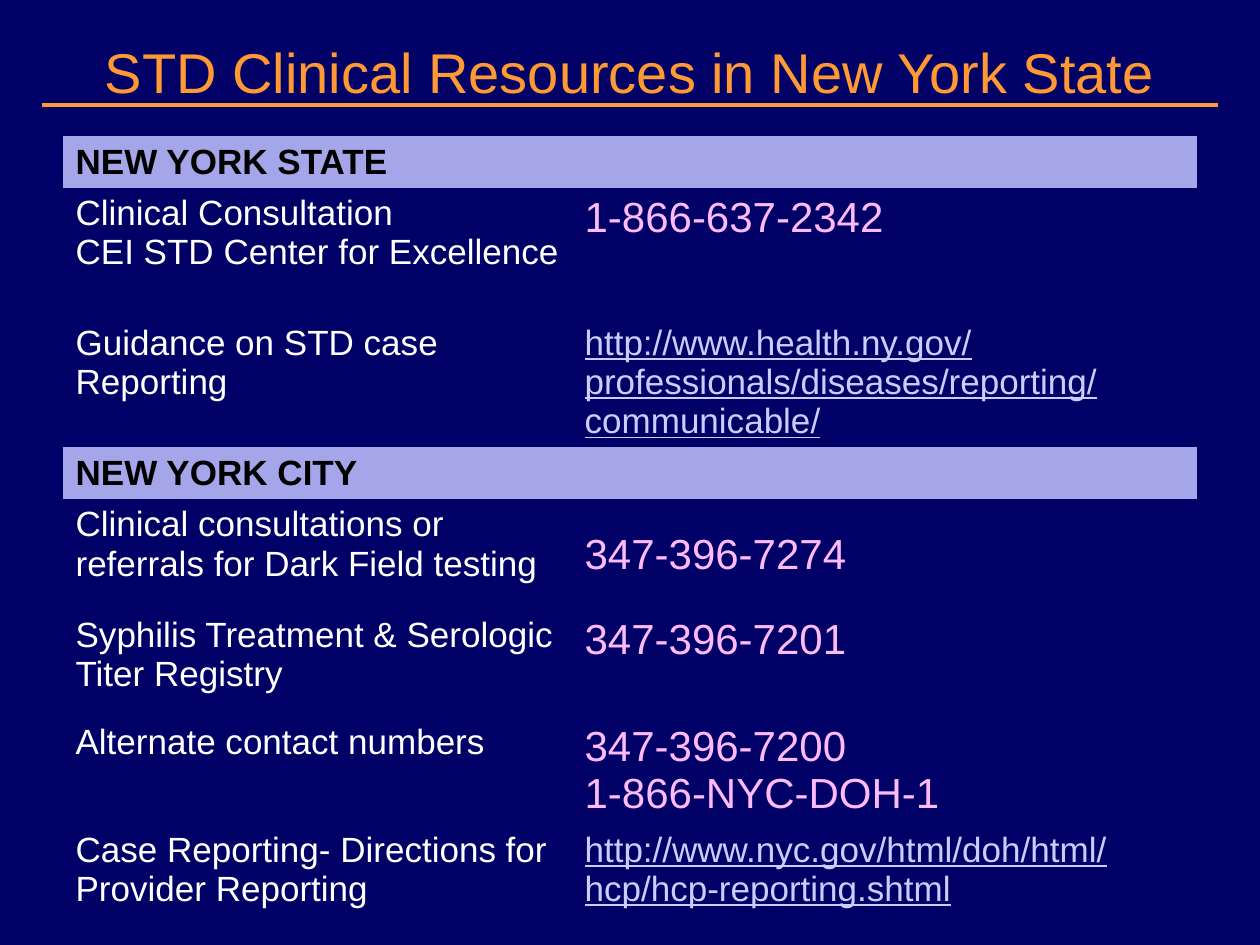
from pptx import Presentation
from pptx.dml.color import RGBColor
from pptx.enum import shapes, text
from pptx.oxml.ns import qn
from pptx.util import Inches, Pt
from lxml import etree

TITLE = "STD Clinical Resources in New York State"

# Each row: kind, height, left lines, right lines
ROWS = [
    ("section", 0.4, ["NEW YORK STATE"], []),
    ("phone", 1.03, ["Clinical Consultation", "CEI STD Center for Excellence"],
     ["1-866-637-2342"]),
    ("link", 1.03, ["Guidance on STD case Reporting"],
     ["http://www.health.ny.gov/professionals/diseases/reporting/communicable/"]),
    ("section", 0.4, ["NEW YORK CITY"], []),
    ("phone_middle", 0.88,
     ["Clinical consultations or referrals for Dark Field testing"],
     ["347-396-7274"]),
    ("phone", 0.85, ["Syphilis Treatment & Serologic Titer Registry"],
     ["347-396-7201"]),
    ("phone", 0.85, ["Alternate contact numbers"],
     ["347-396-7200", "1-866-NYC-DOH-1"]),
    ("link", 0.72, ["Case Reporting- Directions for Provider Reporting"],
     ["http://www.nyc.gov/html/doh/html/hcp/hcp-reporting.shtml"]),
]
COLUMNS = [4.04, 4.96]

THEME = {
    "font": "Arial",
    "background": "000066",
    "accent": "FF9933",
    "band": "A5A5E9",
    "title": dict(size=32, color="FF9933"),
    "section": dict(size=20, color="000000", bold=True),
    "label": dict(size=20, color="FFFFFF"),
    "phone": dict(size=24, color="FFB9FF"),
    "link": dict(size=20, color="CCCCFF", underline=True),
}
NO_STYLE = "{2D5ABB26-0587-4C30-8999-92F81FD0307C}"


def rgb(name):
    return RGBColor.from_string(THEME[name])


def write(tf, lines, style, align=text.PP_ALIGN.LEFT):
    look = THEME[style]
    tf.word_wrap = True
    for i, line in enumerate(lines):
        p = tf.paragraphs[0] if i == 0 else tf.add_paragraph()
        p.text = line
        p.alignment = align
        p.font.name = THEME["font"]
        p.font.size = Pt(look["size"])
        p.font.bold = look.get("bold", False)
        p.font.underline = look.get("underline", False)
        p.font.color.rgb = RGBColor.from_string(look["color"])


prs = Presentation()
prs.slide_width, prs.slide_height = Inches(10), Inches(7.5)
s = prs.slides.add_slide(prs.slide_layouts[5])
s.background.fill.solid()
s.background.fill.fore_color.rgb = rgb("background")

# Title
title = s.shapes.title
title.left, title.top = Inches(0), Inches(0.25)
title.width, title.height = Inches(10), Inches(1.25)
title.text_frame.auto_size = text.MSO_AUTO_SIZE.NONE
title.text_frame.vertical_anchor = text.MSO_ANCHOR.TOP
write(title.text_frame, [TITLE], "title", text.PP_ALIGN.CENTER)

# Rule under the title
rule = s.shapes.add_connector(shapes.MSO_CONNECTOR.STRAIGHT, Inches(0.33),
                              Inches(0.83), Inches(9.67), Inches(0.83))
rule.line.color.rgb = rgb("accent")
rule.line.width = Pt(2.25)
etree.SubElement(rule._element.spPr, qn("a:effectLst"))

# Resource table
frame = s.shapes.add_table(len(ROWS), len(COLUMNS), Inches(0.5), Inches(1.08),
                           Inches(sum(COLUMNS)),
                           Inches(sum(row[1] for row in ROWS)))
table = frame.table
table.first_row = table.horz_banding = False
table._tbl.tblPr.find(qn("a:tableStyleId")).text = NO_STYLE
for column, width in zip(table.columns, COLUMNS):
    column.width = Inches(width)

for i, (kind, height, left, right) in enumerate(ROWS):
    table.rows[i].height = Inches(height)
    label, value = table.cell(i, 0), table.cell(i, 1)
    if kind == "section":
        label.merge(value)
        for cell in (label, value):
            cell.fill.solid()
            cell.fill.fore_color.rgb = rgb("band")
        write(label.text_frame, left, "section")
        continue
    for cell in (label, value):
        cell.fill.background()
    write(label.text_frame, left, "label")
    write(value.text_frame, right, kind.split("_")[0])
    if kind == "phone_middle":
        value.vertical_anchor = text.MSO_ANCHOR.MIDDLE

prs.save("out.pptx")
